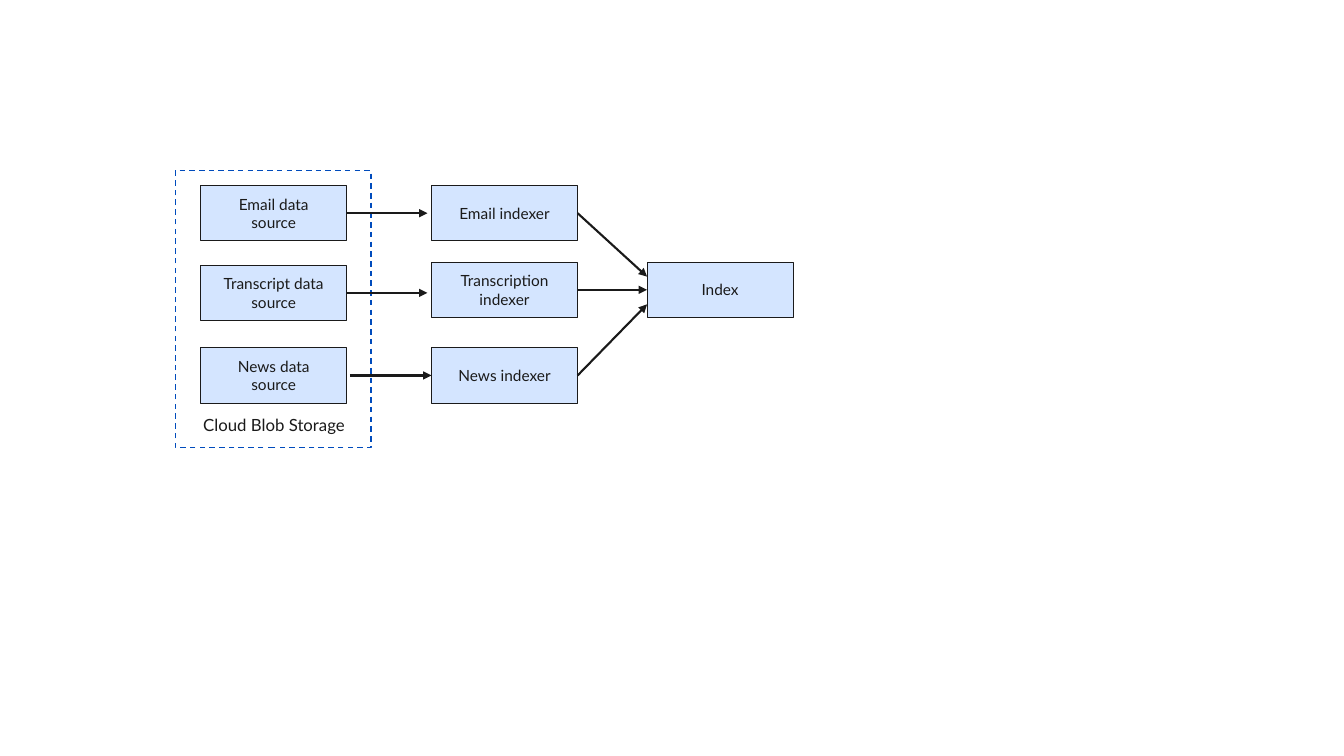
from lxml.etree import SubElement
from pptx import Presentation
from pptx.dml.color import RGBColor
from pptx.enum.dml import MSO_LINE
from pptx.enum.shapes import MSO_CONNECTOR, MSO_SHAPE
from pptx.enum.text import MSO_ANCHOR, PP_ALIGN
from pptx.oxml.ns import qn
from pptx.util import Pt

FONT = "Lato"
INK = "1A1A1A"
BOX_FILL = "D4E5FF"
STORAGE_BLUE = "004BBC"

BOX_WIDTH, BOX_HEIGHT = 104.4, 39.6
SOURCE_LEFT, INDEXER_LEFT, INDEX_LEFT = 143.3, 308.2, 462.2
INDEX_TOP = 187.2

# Source label, source top, indexer label, indexer top,
# gap before the arrow, gap after it, arrival offset from the index middle
PIPELINES = [
    ("Email data source", 132.5, "Email indexer", 132.5, 0, 2.9, -9.4),
    ("Transcript data source", 189.4, "Transcription indexer", 187.2, 0, 2.9, 0),
    ("News data source", 248.4, "News indexer", 248.4, 2.2, 0, 10.4),
]


def color(hex_string):
    return RGBColor.from_string(hex_string)


def write(shape, text, size, side_inset=0, end_inset=0, anchor=MSO_ANCHOR.TOP):
    frame = shape.text_frame
    frame.word_wrap = True
    frame.vertical_anchor = anchor
    frame.margin_left = frame.margin_right = Pt(side_inset)
    frame.margin_top = frame.margin_bottom = Pt(end_inset)
    paragraph = frame.paragraphs[0]
    paragraph.alignment = PP_ALIGN.CENTER
    run = paragraph.add_run()
    run.text = text
    run.font.name = FONT
    run.font.size = Pt(size)
    run.font.color.rgb = color(INK)


def add_rectangle(slide, left, top, width, height, line_color, line_width):
    shape = slide.shapes.add_shape(
        MSO_SHAPE.RECTANGLE, Pt(left), Pt(top), Pt(width), Pt(height))
    shape.shadow.inherit = False
    shape.fill.background()
    shape.line.color.rgb = color(line_color)
    shape.line.width = Pt(line_width)
    return shape


def add_box(slide, text, left, top):
    box = add_rectangle(slide, left, top, BOX_WIDTH, BOX_HEIGHT, INK, 0.75)
    box.fill.solid()
    box.fill.fore_color.rgb = color(BOX_FILL)
    write(box, text, 11, 14.4, 11.5, MSO_ANCHOR.MIDDLE)


def add_label(slide, text, left, top, width, height):
    label = slide.shapes.add_textbox(Pt(left), Pt(top), Pt(width), Pt(height))
    write(label, text, 12)


def add_arrow(slide, start_x, start_y, end_x, end_y):
    arrow = slide.shapes.add_connector(
        MSO_CONNECTOR.STRAIGHT, Pt(start_x), Pt(start_y), Pt(end_x), Pt(end_y))
    arrow.line.color.rgb = color(INK)
    arrow.line.width = Pt(1.5)
    SubElement(arrow.line._get_or_add_ln(), qn("a:tailEnd"), type="triangle")
    SubElement(arrow._element.spPr, qn("a:effectLst"))


def main():
    presentation = Presentation()
    presentation.slide_width, presentation.slide_height = Pt(960), Pt(540)
    slide = presentation.slides.add_slide(presentation.slide_layouts[6])

    # Storage group
    storage = add_rectangle(slide, 125.3, 121.7, 139.7, 198, STORAGE_BLUE, 1)
    storage.line.dash_style = MSO_LINE.DASH
    add_label(slide, "Cloud Blob Storage", 138.2, 296.6, 115.2, 14.4)

    # Shared index
    add_box(slide, "Index", INDEX_LEFT, INDEX_TOP)
    index_middle = INDEX_TOP + BOX_HEIGHT / 2

    # One row per pipeline: source, indexer and their arrows
    for (source, source_top, indexer, indexer_top,
         gap_before, gap_after, arrival) in PIPELINES:
        add_box(slide, source, SOURCE_LEFT, source_top)
        add_box(slide, indexer, INDEXER_LEFT, indexer_top)
        source_middle = source_top + BOX_HEIGHT / 2
        add_arrow(slide, SOURCE_LEFT + BOX_WIDTH + gap_before, source_middle,
                  INDEXER_LEFT - gap_after, source_middle)
        add_arrow(slide, INDEXER_LEFT + BOX_WIDTH, indexer_top + BOX_HEIGHT / 2,
                  INDEX_LEFT, index_middle + arrival)

    presentation.save("out.pptx")


if __name__ == "__main__":
    main()
